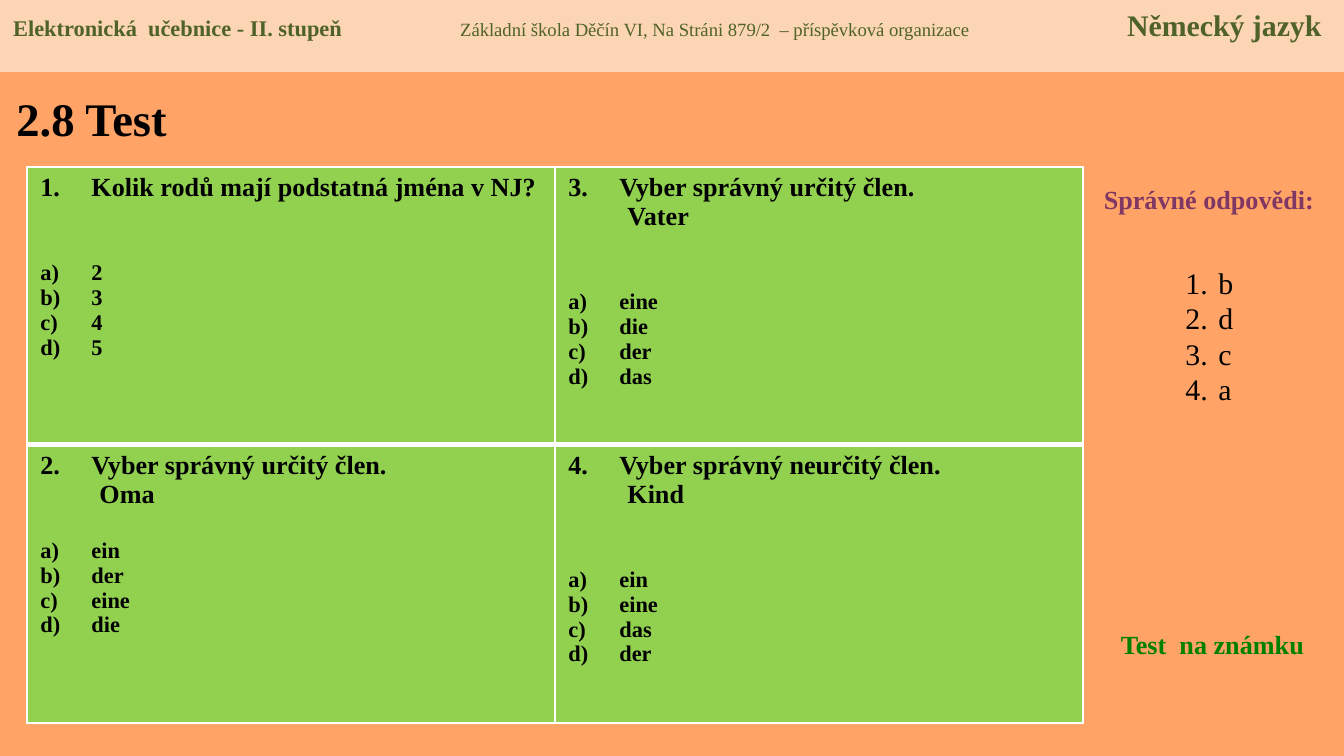
from typing import NamedTuple

from lxml import etree
from pptx import Presentation, util as u
from pptx.dml.color import RGBColor
from pptx.enum import shapes, text
from pptx.oxml.ns import qn

FONT = "Times New Roman"
BLACK, WHITE, OLIVE = "000000", "FFFFFF", "4F6228"
ORANGE, PEACH, GREEN = "FFA366", "FCD5B5", "92D050"
PURPLE, DARK_GREEN = "813763", "008000"
LINE = 29  # height of one question line


class Question(NamedTuple):
    row: int
    column: int
    prompt: str
    word: str
    options: str
    gap: int


class Label(NamedTuple):
    wording: str
    color: str
    box: tuple


QUESTIONS = [
    Question(0, 0, "Kolik rodů mají podstatná jména v NJ?", "", "2 3 4 5", 2 * LINE),
    Question(1, 0, "Vyber správný určitý člen.", "Oma", "ein der eine die", LINE),
    Question(0, 1, "Vyber správný určitý člen.", "Vater", "eine die der das", 2 * LINE),
    Question(1, 1, "Vyber správný neurčitý člen.", "Kind", "ein eine das der", 2 * LINE),
]
LABELS = [
    Label("Správné odpovědi:", PURPLE, (1082, 177, 254, 46)),
    Label("Test  na známku", DARK_GREEN, (1107, 622, 211, 46)),
]


def px(length: int) -> u.Emu:
    return u.Emu(round(length * 914400 / 134.4))


def rgb(color: str) -> RGBColor:
    return RGBColor.from_string(color)


def add_run(paragraph, wording: str, size: int, color: str = BLACK, bold: bool = True) -> None:
    run = paragraph.add_run()
    run.text = wording
    run.font.name = FONT
    run.font.size = u.Pt(size)
    run.font.bold = bold
    run.font.color.rgb = rgb(color)


def next_paragraph(frame):
    """Reuse the first paragraph while it is still empty."""
    first = frame.paragraphs[0]
    return frame.add_paragraph() if first.runs else first


def set_indent(paragraph, left: int, hanging: int = 0) -> None:
    properties = paragraph._p.get_or_add_pPr()
    properties.set("marL", str(px(left)))
    properties.set("indent", str(-px(hanging)))


def number(paragraph, style: str, indent: int, start: int = 1) -> None:
    set_indent(paragraph, indent, indent)
    properties = paragraph._p.get_or_add_pPr()
    etree.SubElement(properties, qn("a:buFont"), typeface=FONT)
    bullet = etree.SubElement(properties, qn("a:buAutoNum"), type=style)
    if start > 1:
        bullet.set("startAt", str(start))


def place(shape, left: int, top: int, width: int, height: int) -> None:
    shape.left, shape.top, shape.width, shape.height = map(px, (left, top, width, height))


def set_borders(cell, widths: dict) -> None:
    properties = cell._tc.get_or_add_tcPr()
    for position, (side, width) in enumerate(widths.items()):
        line = etree.Element(qn(f"a:ln{side}"), w=str(u.Pt(width)))
        fill = etree.SubElement(line, qn("a:solidFill"))
        etree.SubElement(fill, qn("a:srgbClr"), val=WHITE)
        properties.insert(position, line)


def fill_question(table, index: int, question: Question) -> None:
    cell = table.cell(question.row, question.column)
    cell.fill.solid()
    cell.fill.fore_color.rgb = rgb(GREEN)
    top, bottom = (1, 3) if question.row == 0 else (3, 1)
    set_borders(cell, {"L": 1, "R": 1, "T": top, "B": bottom})

    frame = cell.text_frame
    prompt = next_paragraph(frame)
    number(prompt, "arabicPeriod", 51, index)
    add_run(prompt, question.prompt, 14)
    if question.word:
        word = next_paragraph(frame)
        set_indent(word, 59)
        add_run(word, question.word, 14)
    for position, option in enumerate(question.options.split()):
        paragraph = next_paragraph(frame)
        if position == 0:
            paragraph.space_before = px(question.gap)
        number(paragraph, "alphaLcParenR", 51)
        add_run(paragraph, option, 12)


def add_questions(slide) -> None:
    frame = slide.shapes.add_table(2, 2, px(27), px(167), px(1056), px(556))
    table = frame.table
    table.first_row = table.horz_banding = False
    for index, question in enumerate(QUESTIONS, start=1):
        fill_question(table, index, question)


def add_answers(body) -> None:
    place(body, 1172, 222, 74, 267)
    frame = body.text_frame
    frame.auto_size = text.MSO_AUTO_SIZE.NONE
    frame.margin_top = px(43)
    for answer in "bdca":
        paragraph = next_paragraph(frame)
        paragraph.space_before = u.Pt(0)
        paragraph.line_spacing = u.Pt(19)
        number(paragraph, "arabicPeriod", 33)
        add_run(paragraph, answer, 16, bold=False)


def add_label(slide, label: Label) -> None:
    box = slide.shapes.add_textbox(*map(px, label.box))
    box.text_frame.word_wrap = False
    paragraph = box.text_frame.paragraphs[0]
    paragraph.alignment = text.PP_ALIGN.CENTER
    add_run(paragraph, label.wording, 14, label.color)


def add_header(slide) -> None:
    band = slide.shapes.add_shape(shapes.MSO_SHAPE.RECTANGLE, 0, 0, px(1344), px(72))
    band.shadow.inherit = False
    band.fill.solid()
    band.fill.fore_color.rgb = rgb(PEACH)
    band.line.fill.background()
    band.text_frame.vertical_anchor = text.MSO_ANCHOR.TOP
    paragraph = band.text_frame.paragraphs[0]
    paragraph.alignment = text.PP_ALIGN.LEFT
    tabs = etree.SubElement(paragraph._p.get_or_add_pPr(), qn("a:tabLst"))
    for position in (447, 1114):
        etree.SubElement(tabs, qn("a:tab"), pos=str(px(position)), algn="l")
    add_run(paragraph, "Elektronická  učebnice - II. stupeň\t", 12, OLIVE)
    add_run(paragraph, "Základní škola Děčín VI, Na Stráni 879/2  – příspěvková organizace\t",
            10, OLIVE, bold=False)
    add_run(paragraph, "Německý jazyk", 16, OLIVE)


def main() -> None:
    presentation = Presentation()
    presentation.slide_width, presentation.slide_height = px(1344), px(756)
    slide = presentation.slides.add_slide(presentation.slide_layouts[1])
    slide.background.fill.solid()
    slide.background.fill.fore_color.rgb = rgb(ORANGE)

    # Title
    title = slide.shapes.title
    place(title, 3, 74, 429, 87)
    title.text_frame.auto_size = text.MSO_AUTO_SIZE.NONE
    title.text_frame.vertical_anchor = text.MSO_ANCHOR.MIDDLE
    heading = title.text_frame.paragraphs[0]
    heading.alignment = text.PP_ALIGN.LEFT
    add_run(heading, "2.8 Test", 25)

    # Questions, answer key and header band
    add_questions(slide)
    add_answers(slide.placeholders[1])
    for label in LABELS:
        add_label(slide, label)
    add_header(slide)
    presentation.save("out.pptx")


if __name__ == "__main__":
    main()
